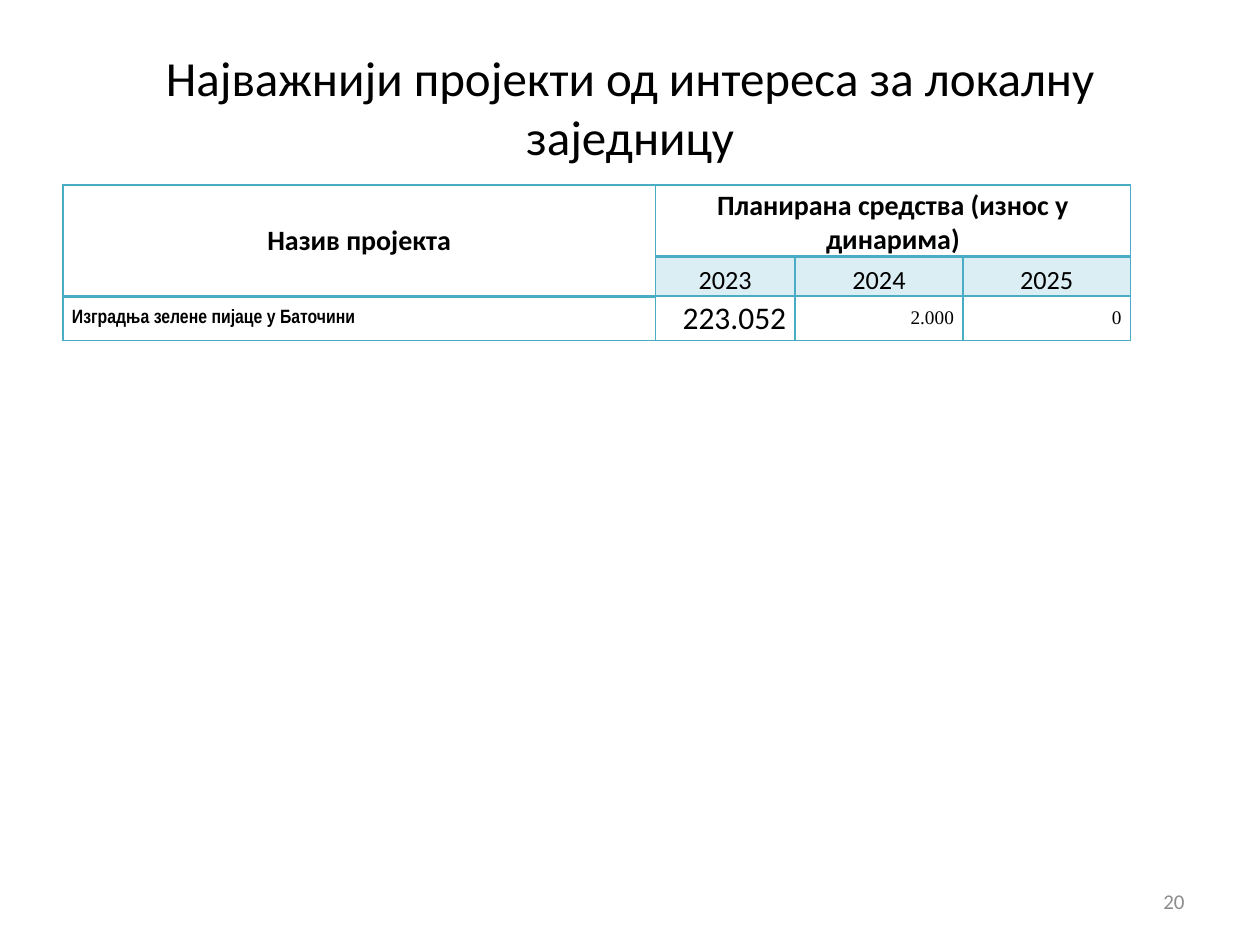
from lxml import etree
from pptx import Presentation
from pptx.dml.color import RGBColor
from pptx.enum import text as t
from pptx.oxml import ns
from pptx.util import Cm, Pt

TITLE = "Најважнији пројекти од интереса за локалну заједницу"
PAGE = "20"
ROWS = [
    ["Назив пројекта", "Планирана средства (износ у динарима)", "", ""],
    ["", "2023", "2024", "2025"],
    ["Изградња зелене пијаце у Баточини", "223.052", "2.000", "0"],
]
COL_WIDTHS = [11.94, 2.82, 3.38, 3.38]
ROW_HEIGHTS = [1.45, 0.79, 0.89]
BLACK, GREY, TEAL, PALE = "000000", "8C8C8C", "4BACC6", "DBEEF4"
LEFT, CENTER, RIGHT = t.PP_ALIGN.LEFT, t.PP_ALIGN.CENTER, t.PP_ALIGN.RIGHT
MIDDLE, BOTTOM = t.MSO_ANCHOR.MIDDLE, t.MSO_ANCHOR.BOTTOM

# font, size, bold, alignment
HEAD = ("Calibri", 16, True, CENTER)
YEAR = ("Calibri", 15, False, CENTER)
PROJECT = ("Arial Narrow", 11, True, LEFT)
FIRST_SUM = ("Calibri", 18, False, RIGHT)
LATER_SUM = ("Times New Roman", 11, False, RIGHT)
STYLES = [[HEAD] * 4, [YEAR] * 4, [PROJECT, FIRST_SUM, LATER_SUM, LATER_SUM]]


def rgb(value):
    return RGBColor.from_string(value)


def write(tf, text, style, color=BLACK):
    font, size, bold, align = style
    p = tf.paragraphs[0]
    p.alignment = align
    r = p.add_run()
    r.text = text
    r.font.name, r.font.size, r.font.bold = font, Pt(size), bold
    r.font.color.rgb = rgb(color)


def set_borders(cell, widths):
    """Draw the left, right, top and bottom lines, widths in points."""
    tcPr = cell._tc.get_or_add_tcPr()
    for i, (side, width) in enumerate(zip("LRTB", widths)):
        ln = etree.Element(ns.qn("a:ln" + side), w=str(Pt(width)))
        fill = etree.SubElement(ln, ns.qn("a:solidFill"))
        etree.SubElement(fill, ns.qn("a:srgbClr"), val=TEAL)
        tcPr.insert(i, ln)


def add_projects(s):
    table = s.shapes.add_table(len(ROWS), len(COL_WIDTHS), Cm(1.27), Cm(3.73),
                               Cm(sum(COL_WIDTHS)), Cm(sum(ROW_HEIGHTS))).table
    table.first_row = table.horz_banding = False
    for column, width in zip(table.columns, COL_WIDTHS):
        column.width = Cm(width)
    for row, height in zip(table.rows, ROW_HEIGHTS):
        row.height = Cm(height)
    table.cell(0, 0).merge(table.cell(1, 0))
    table.cell(0, 1).merge(table.cell(0, 3))

    for i, row in enumerate(ROWS):
        for j, text in enumerate(row):
            cell = table.cell(i, j)
            cell.margin_left = cell.margin_right = Cm(0.18)
            cell.margin_top = cell.margin_bottom = 0
            cell.vertical_anchor = BOTTOM if i < 2 and j else MIDDLE
            if i == 1 and j:
                cell.fill.solid()
                cell.fill.fore_color.rgb = rgb(PALE)
            else:
                cell.fill.background()
            head_end = 0 if j else 1
            set_borders(cell, (1, 1, 2 if i == head_end + 1 else 1,
                               2 if i in (0, head_end) else 1))
            if text:
                write(cell.text_frame, text, STYLES[i][j])


def main():
    prs = Presentation()
    prs.slide_width, prs.slide_height = Cm(25.4), Cm(19.05)
    s = prs.slides.add_slide(prs.slide_layouts[5])

    title = s.shapes.title
    title.left, title.top, title.width, title.height = Cm(1.27), Cm(0.76), Cm(22.86), Cm(2.77)
    title.text_frame.vertical_anchor = MIDDLE
    write(title.text_frame, TITLE, ("Calibri", 28, False, CENTER))

    add_projects(s)

    number = s.shapes.add_textbox(Cm(18.2), Cm(17.66), Cm(5.93), Cm(1.01))
    number.text_frame.word_wrap = True
    number.text_frame.vertical_anchor = MIDDLE
    write(number.text_frame, PAGE, ("Calibri", 12, False, RIGHT), GREY)

    prs.save("out.pptx")


if __name__ == "__main__":
    main()
